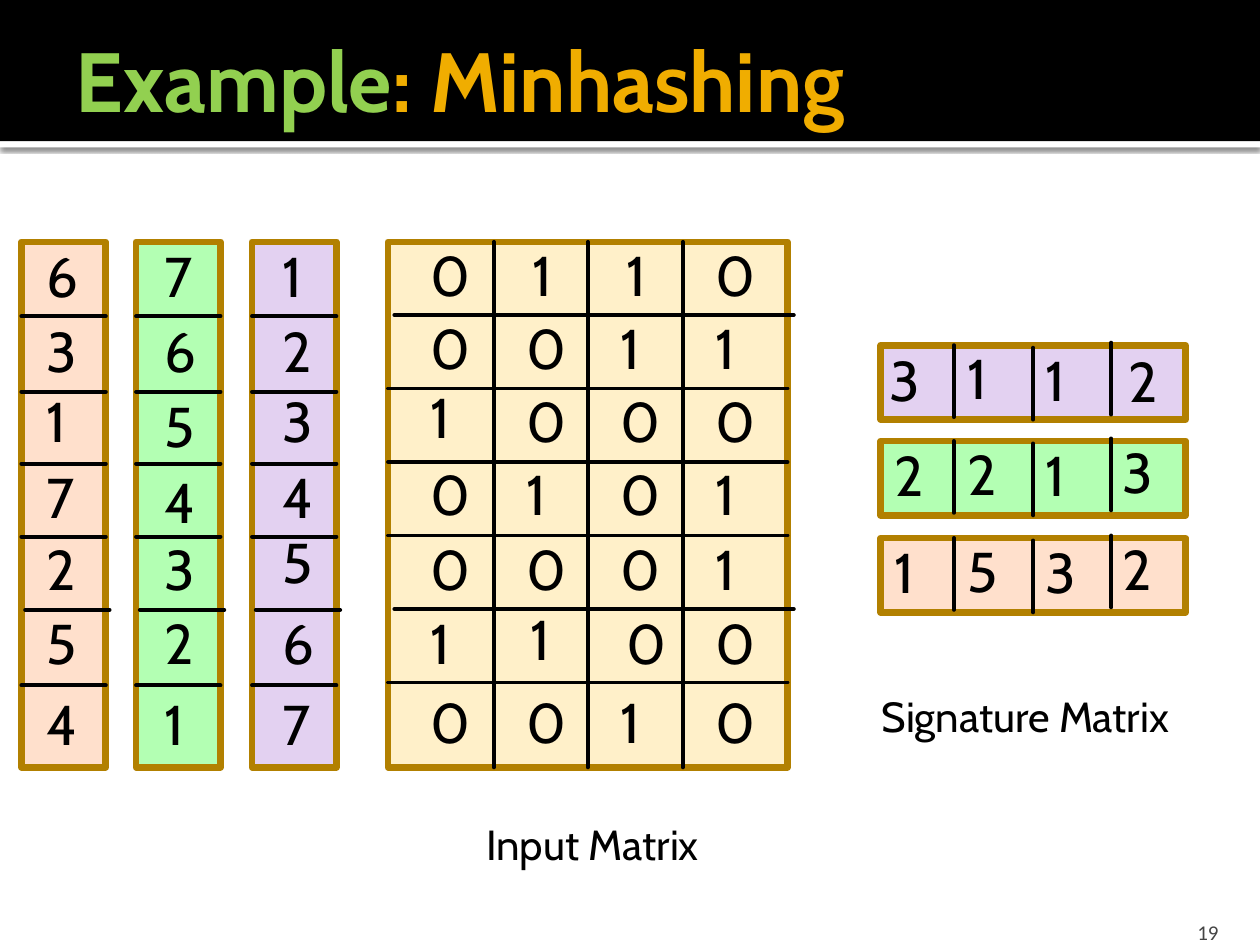
from lxml import etree
from pptx import Presentation
from pptx.dml.color import RGBColor
from pptx.enum.shapes import MSO_CONNECTOR, MSO_SHAPE
from pptx.enum.text import MSO_ANCHOR, MSO_AUTO_SIZE, PP_ALIGN
from pptx.oxml import parse_xml
from pptx.oxml.ns import qn
from pptx.util import Inches, Pt

RECT, LINE = MSO_SHAPE.RECTANGLE, MSO_CONNECTOR.STRAIGHT
MIDDLE, BOTTOM = MSO_ANCHOR.MIDDLE, MSO_ANCHOR.BOTTOM
LEFT, RIGHT = PP_ALIGN.LEFT, PP_ALIGN.RIGHT
GROW, FIXED = MSO_AUTO_SIZE.SHAPE_TO_FIT_TEXT, MSO_AUTO_SIZE.NONE

COLORS = {
    "black": "000000", "white": "FFFFFF", "lime": "92D050", "gold": "F0AD00",
    "gray": "454545", "edge": "B28000", "cream": "FFF0C9", "peach": "FFE0CC",
    "green": "B3FFB3", "lilac": "E3D1F1",
}
SHADOW = (
    '<a:effectLst xmlns:a="http://schemas.openxmlformats.org/drawingml/2006/main">'
    '<a:outerShdw blurRad="31750" dist="10160" dir="5400000">'
    '<a:srgbClr val="000000"><a:alpha val="60000"/></a:srgbClr>'
    '</a:outerShdw></a:effectLst>'
)

MATRIX = ["0110", "0011", "1000", "0101", "0001", "1100", "0010"]
COLS = [3.32, 4.08, 4.83, 5.58]
ROWS = [1.86, 2.44, 3.02, 3.6, 4.19, 4.78, 5.41]
SHIFTS = {(0, 1): (0.05, 0), (0, 2): (0.04, 0), (2, 0): (0, -0.03),
          (5, 1): (0.03, -0.03), (5, 2): (0.04, 0)}

# Left edge, fill, digits from top to bottom, first digit column, row shifts
ORDERS = [
    (0.17, "peach", "6317254", 0.27, {}),
    (1.08, "green", "7654321", 1.21, {2: 0.04, 3: 0.04}),
    (2.0, "lilac", "1234567", 2.14, {4: -0.05}),
]
CUTS = [2.51, 3.11, 3.68, 4.26, 4.84, 5.44]
TOPS = [1.87, 2.46, 3.02, 3.62, 4.19, 4.78, 5.42]

# Top edge, fill, digits from left to right, column shifts
SIGNS = [
    (2.74, "lilac", "3112", {0: (-0.04, 0), 3: (0.05, 0.04)}),
    (3.5, "green", "2213", {}),
    (4.27, "peach", "1532", {}),
]
SPLITS = [(7.57, 0), (8.2, 0.02), (8.82, -0.02)]
SPOTS = [(7.0, -0.05), (7.58, -0.06), (8.2, -0.05), (8.81, -0.08)]


def color(name):
    return RGBColor.from_string(COLORS[name])


def write(para, text, size=32, font="Cabin", fill="black", bold=None, align=LEFT):
    para.alignment = align
    run = para.add_run()
    run.text = text
    run.font.size, run.font.name, run.font.bold = Pt(size), font, bold
    run.font.color.rgb = color(fill)


class Deck:
    """Holds the style, the slide and the shapes that new items go into."""
    edge, rule = 3.78, 2.25

    def __init__(self, slide):
        self.slide = slide
        self.shapes = slide.shapes

    def group(self):
        self.shapes = self.slide.shapes.add_group_shape().shapes

    def leave(self):
        self.shapes = self.slide.shapes

    def box(self, x, y, w, h, fill, edge="edge"):
        item = self.shapes.add_shape(RECT, *map(Inches, (x, y, w, h)))
        item.shadow.inherit = False
        item.fill.solid()
        item.fill.fore_color.rgb = color(fill)
        if edge:
            item.line.color.rgb = color(edge)
            item.line.width = Pt(self.edge)
        else:
            item.line.fill.background()
        return item

    def band(self, y, h, fill, order):
        """Add a full-width bar behind the title."""
        item = self.box(0, y, 10, h, fill, edge=None)
        tree = item._element.getparent()
        tree.insert(2 + order, item._element)
        return item

    def line(self, x1, y1, x2, y2):
        item = self.shapes.add_connector(LINE, *map(Inches, (x1, y1, x2, y2)))
        item.line.color.rgb = color("black")
        item.line.width = Pt(self.rule)
        item.line._get_or_add_ln().set("cap", "rnd")
        etree.SubElement(item._element.spPr, qn("a:effectLst"))
        return item

    def label(self, text, x, y, w=0.42, h=0.64, wrap=False, **style):
        frame = self.shapes.add_textbox(*map(Inches, (x, y, w, h))).text_frame
        frame.word_wrap = wrap
        frame.auto_size = FIXED if wrap else GROW
        write(frame.paragraphs[0], text, **style)
        return frame

    def title(self, parts):
        item = self.slide.shapes.title
        item.left, item.top, item.width, item.height = map(
            Inches, (0.5, 0.17, 9.5, 0.92))
        frame = item.text_frame
        frame.vertical_anchor, frame.auto_size = MIDDLE, FIXED
        frame.margin_left = Inches(0.1)
        frame.margin_right = frame.margin_top = frame.margin_bottom = Inches(0.05)
        for text, fill in parts:
            write(frame.paragraphs[0], text, size=48, fill=fill, bold=True)


def matrix(deck):
    frame = deck.box(3.08, 1.92, 3.17, 4.17, "cream")
    for i in range(6):
        x = 3.13 if i in (0, 4) else 3.08
        y = 2.5 + i * 3.5 / 6
        deck.line(x, y, x + 3.17, y)
    for x in (3.92, 4.67, 5.42):
        rule = deck.line(x, 1.92, x, 6.09)
        if x == 4.67:
            rule.begin_connect(frame, 0)
            rule.end_connect(frame, 2)
    for r, row in enumerate(MATRIX):
        for c, digit in enumerate(row):
            dx, dy = SHIFTS.get((r, c), (0, 0))
            deck.label(digit, COLS[c] + dx, ROWS[r] + dy)


def orders(deck):
    """Draw the three row permutations."""
    for left, fill, digits, x, shifts in ORDERS:
        deck.group()
        deck.box(left, 1.92, 0.67, 4.17, fill)
        for i, y in enumerate(CUTS):
            start = left + (0.03 if i == 4 else 0)
            deck.line(start, y, start + 0.67, y)
        for i, digit in enumerate(digits):
            deck.label(digit, x, TOPS[i] + shifts.get(i, 0))
    deck.leave()


def signs(deck):
    """Draw the three rows of the signature matrix."""
    for top, fill, digits, shifts in SIGNS:
        deck.group()
        deck.box(6.99, top, 2.42, 0.59, fill)
        for x, dy in SPLITS:
            deck.line(x, top + dy, x, top + dy + 0.57)
        for i, (x, y) in enumerate(SPOTS):
            dx, dy = shifts.get(i, (0, 0))
            deck.label(digits[i], x + dx, top + y + dy)
    deck.leave()


def main():
    show = Presentation()
    show.slide_width, show.slide_height = Inches(10), Inches(7.5)
    deck = Deck(show.slides.add_slide(show.slide_layouts[5]))
    strip = deck.band(1.12, 0.05, "white", 0)
    props = strip._element.spPr
    props.replace(props.find(qn("a:effectLst")), parse_xml(SHADOW))
    deck.band(0, 1.12, "black", 1)
    deck.title([("Example", "lime"), (": Minhashing", "gold")])
    number = deck.label("19", 8.97, 7.2, 0.8, 0.3, wrap=True, size=12,
                        font="Calibri", fill="gray", align=RIGHT)
    number.vertical_anchor, number.margin_bottom = BOTTOM, 0
    matrix(deck)
    orders(deck)
    signs(deck)
    deck.label("Input Matrix", 3.76, 6.45, 1.9, 0.5, size=24)
    deck.label("Signature Matrix", 6.9, 5.43, 2.53, 0.5, size=24)
    show.save("out.pptx")


if __name__ == "__main__":
    main()
